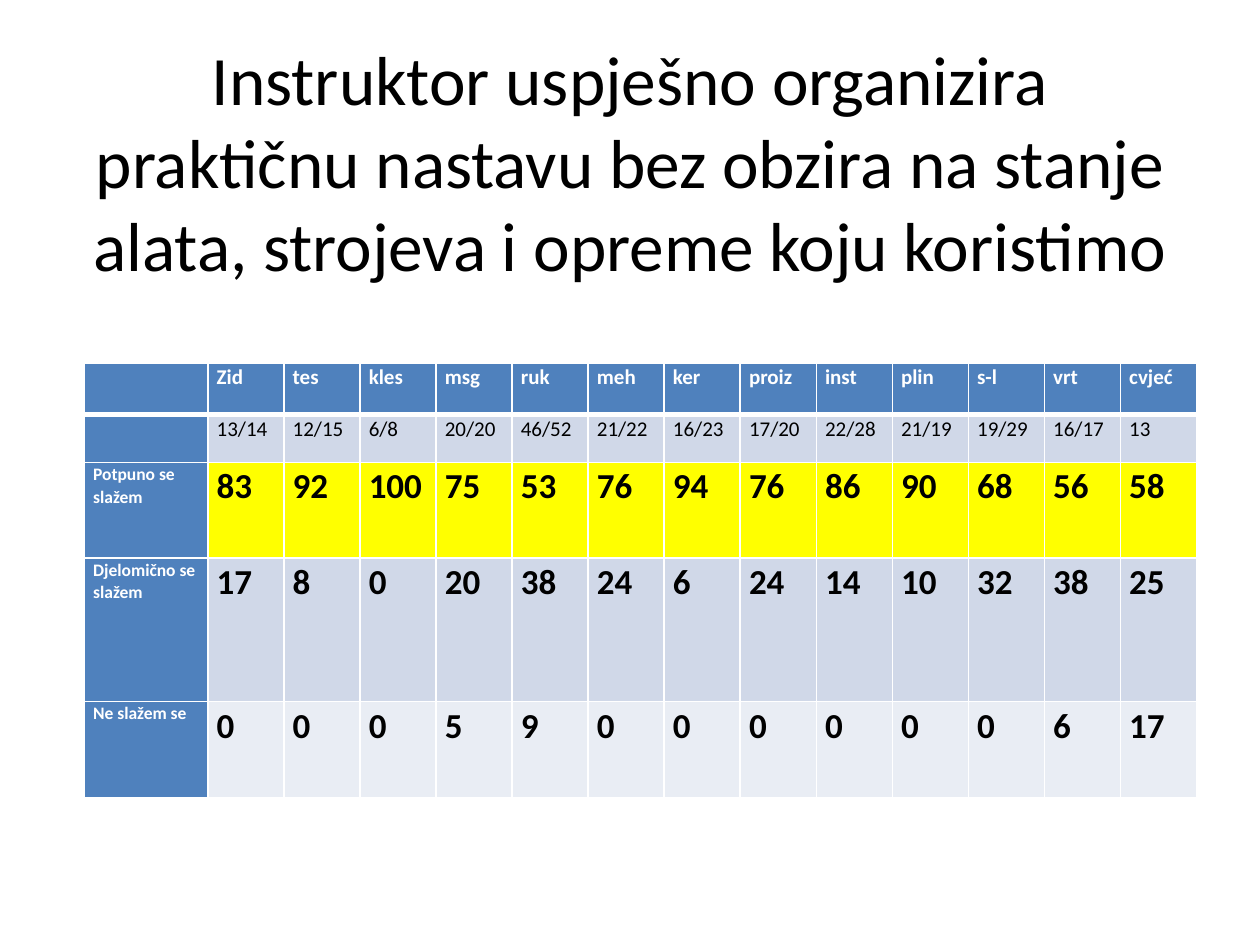
from lxml import etree
from pptx import Presentation
from pptx import util as u
from pptx.dml.color import RGBColor
from pptx.enum import text
from pptx.oxml.ns import qn

FONT = "Calibri"
BLACK = RGBColor(0x00, 0x00, 0x00)
WHITE = RGBColor(0xFF, 0xFF, 0xFF)
BLUE = RGBColor(0x4F, 0x81, 0xBD)
BAND = RGBColor(0xD0, 0xD8, 0xE8)
PALE = RGBColor(0xE9, 0xED, 0xF4)
YELLOW = RGBColor(0xFF, 0xFF, 0x00)

TITLE = ("Instruktor uspješno organizira praktičnu nastavu bez obzira "
         "na stanje alata, strojeva i opreme koju koristimo")

# Row label, values, height, fill, font size, bold, font colour
ROWS = [
    ("", "Zid tes kles msg ruk meh ker proiz inst plin s-l vrt cvjeć",
     0.41, BLUE, 12, True, WHITE),
    ("", "13/14 12/15 6/8 20/20 46/52 21/22 16/23 17/20 22/28 21/19 19/29 16/17 13",
     0.38, BAND, 12, False, BLACK),
    ("Potpuno se slažem", "83 92 100 75 53 76 94 76 86 90 68 56 58",
     0.76, YELLOW, 20, True, BLACK),
    ("Djelomično se slažem", "17 8 0 20 38 24 6 24 14 10 32 38 25",
     1.14, BAND, 20, True, BLACK),
    ("Ne slažem se", "0 0 0 5 9 0 0 0 0 0 0 6 17",
     0.76, PALE, 20, True, BLACK),
]
LABEL_WIDTH = 0.98


def add_span(para, words, size, bold, colour):
    span = para.add_run()
    span.text = words
    span.font.name = FONT
    span.font.size = u.Pt(size)
    span.font.bold = bold
    span.font.color.rgb = colour


def set_borders(cell, top, bottom):
    properties = cell._tc.get_or_add_tcPr()
    for side, width in (("L", 1), ("R", 1), ("T", top), ("B", bottom)):
        line = etree.SubElement(properties, qn(f"a:ln{side}"), w=str(u.Pt(width)))
        fill = etree.SubElement(line, qn("a:solidFill"))
        etree.SubElement(fill, qn("a:srgbClr"), val=str(WHITE))


def format_cell(cell, words, fill, size, bold, colour):
    cell.margin_left = cell.margin_right = u.Inches(0.07)
    cell.margin_top = cell.margin_bottom = 0
    cell.fill.solid()
    cell.fill.fore_color.rgb = fill
    para = cell.text_frame.paragraphs[0]
    para.line_spacing = 1.07
    if words:
        add_span(para, words, size, bold, colour)


def place_title(page, left, top, width, height):
    title = page.shapes.title
    title.left, title.top = u.Inches(left), u.Inches(top)
    title.width, title.height = u.Inches(width), u.Inches(height)
    frame = title.text_frame
    frame.word_wrap = True
    frame.auto_size = text.MSO_AUTO_SIZE.NONE
    frame.vertical_anchor = text.MSO_ANCHOR.MIDDLE
    para = frame.paragraphs[0]
    para.alignment = text.PP_ALIGN.CENTER
    add_span(para, TITLE, 39.6, False, BLACK)


def place_survey_table(page, left, top, width, height):
    value_count = len(ROWS[0][1].split())
    table = page.shapes.add_table(
        len(ROWS), value_count + 1,
        u.Inches(left), u.Inches(top), u.Inches(width), u.Inches(height)).table

    # Label column, then equal value columns
    table.columns[0].width = u.Inches(LABEL_WIDTH)
    for column in range(1, value_count + 1):
        table.columns[column].width = u.Inches((width - LABEL_WIDTH) / value_count)

    for row, (label, values, row_height, fill, size, bold, colour) in enumerate(ROWS):
        table.rows[row].height = u.Inches(row_height)
        for column, words in enumerate([label] + values.split()):
            cell = table.cell(row, column)
            # Thick rule between the header and the body
            set_borders(cell, 3 if row == 1 else 1, 3 if row == 0 else 1)
            if column == 0:
                format_cell(cell, words, BLUE, 10, True, WHITE)
            else:
                format_cell(cell, words, fill, size, bold, colour)


def main():
    deck = Presentation()
    deck.slide_width, deck.slide_height = u.Inches(10), u.Inches(7.5)
    page = deck.slides.add_slide(deck.slide_layouts[5])
    place_title(page, 0.5, 0.3, 9, 1.95)
    place_survey_table(page, 0.67, 2.88, 8.83, 3.44)
    deck.save("out.pptx")


if __name__ == "__main__":
    main()
